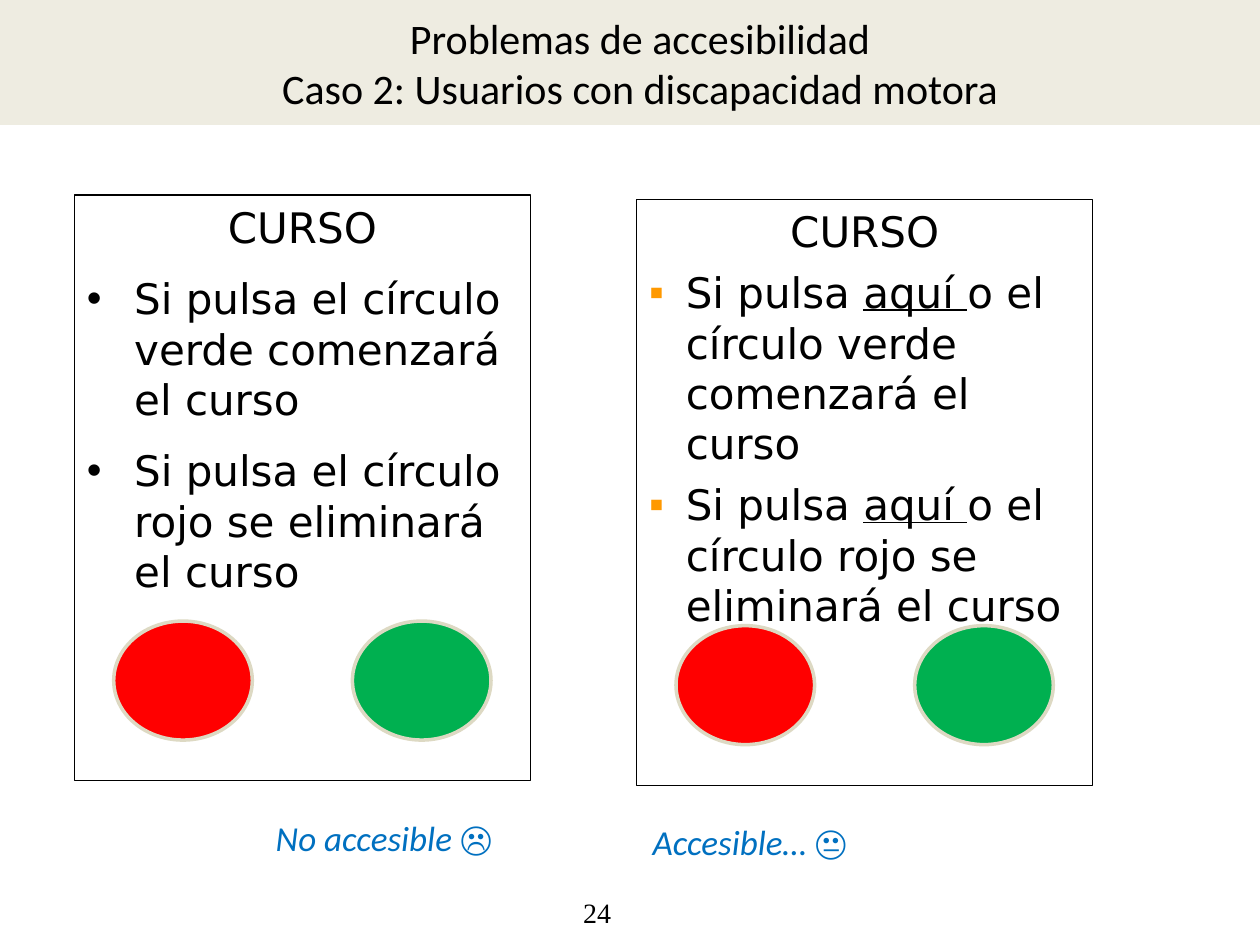
from lxml.etree import SubElement
from pptx import Presentation
from pptx.dml.color import RGBColor
from pptx.enum.shapes import MSO_SHAPE as Shape
from pptx.enum.text import MSO_ANCHOR as Anchor, MSO_AUTO_SIZE as AutoSize, PP_ALIGN as Align
from pptx.oxml.ns import qn
from pptx.util import Pt

COLORS = {
    "text": "000000", "banner": "EEECE1", "red": "FF0000", "green": "00B050",
    "ring": "DDD9C3", "caption": "0070C0", "orange": "FF9900",
}
BODY_FONT = "DejaVu Sans"
PANEL_SIZE = (260.6, 334.8)


def rgb(name):
    return RGBColor.from_string(COLORS[name])


def place(shape, left, top, width, height):
    shape.left, shape.top = Pt(left), Pt(top)
    shape.width, shape.height = Pt(width), Pt(height)


def add_span(para, text, size, font=BODY_FONT, color="text", italic=None, underline=None):
    span = para.add_run()
    span.text = text
    span.font.size, span.font.name = Pt(size), font
    span.font.color.rgb = rgb(color)
    span.font.italic, span.font.underline = italic, underline


def set_bullet(para, char=None, indent=0, color=None):
    props = para._p.get_or_add_pPr()
    props.set("marL", str(Pt(indent)))
    props.set("indent", str(-Pt(indent)))
    if not char:
        SubElement(props, qn("a:buNone"))
        return
    if color:
        SubElement(SubElement(props, qn("a:buClr")), qn("a:srgbClr"), val=COLORS[color])
    SubElement(props, qn("a:buFont"), typeface="Arial")
    SubElement(props, qn("a:buChar"), char=char)


def add_title(page, lines):
    box = page.shapes.title
    place(box, 0, 0, 720, 71.4)
    box.fill.solid()
    box.fill.fore_color.rgb = rgb("banner")
    frame = box.text_frame
    frame.auto_size, frame.vertical_anchor = AutoSize.NONE, Anchor.MIDDLE
    frame.margin_left, frame.margin_right = Pt(39.6), Pt(28)
    para = frame.paragraphs[0]
    para.alignment = Align.CENTER
    for index, line in enumerate(lines):
        if index:
            para.add_line_break()
        add_span(para, line, 24, "Calibri")


def fill_panel(box, left, top, items, gap, **bullet):
    """Outline a course panel and write its heading and bulleted items."""
    place(box, left, top, *PANEL_SIZE)
    box.line.color.rgb, box.line.width = rgb("text"), Pt(0.75)
    frame = box.text_frame
    frame.word_wrap, frame.auto_size = True, AutoSize.NONE
    frame.vertical_anchor = Anchor.TOP
    heading = frame.paragraphs[0]
    set_bullet(heading)
    heading.alignment, heading.space_before = Align.CENTER, Pt(0)
    add_span(heading, "CURSO", 24)
    for item in items:
        para = frame.add_paragraph()
        set_bullet(para, **bullet)
        para.alignment, para.space_before = Align.LEFT, Pt(gap)
        for text, underline in item:
            add_span(para, text, 24, underline=underline)


def add_circles(page, panel_left, panel_top):
    for index, color in enumerate(("red", "green")):
        circle = page.shapes.add_shape(
            Shape.OVAL, Pt(panel_left + 22.5 + index * 136.4), Pt(panel_top + 243.5),
            Pt(79.2), Pt(68))
        circle.shadow.inherit = False
        circle.fill.solid()
        circle.fill.fore_color.rgb = rgb(color)
        circle.line.color.rgb, circle.line.width = rgb("ring"), Pt(2)


def add_label(page, left, top, width, height, spans, **style):
    box = page.shapes.add_textbox(Pt(left), Pt(top), Pt(width), Pt(height))
    box.text_frame.word_wrap = False
    for text, italic in spans:
        add_span(box.text_frame.paragraphs[0], text, italic=italic, **style)


def main():
    deck = Presentation()
    deck.slide_width, deck.slide_height = Pt(720), Pt(540)
    page = deck.slides.add_slide(deck.slide_layouts[1])
    add_title(page, ["Problemas de accesibilidad",
                     "Caso 2: Usuarios con discapacidad motora"])

    # Left panel: circles only
    left, top = 42.5, 111.4
    fill_panel(page.placeholders[1], left, top,
               [[(f"Si pulsa el círculo {action} el curso", None)]
                for action in ("verde comenzará", "rojo se eliminará")],
               gap=12, char="•", indent=27)
    add_circles(page, left, top)

    # Right panel: circles and text links
    left, top = 363.8, 114
    panel = page.shapes.add_shape(Shape.RECTANGLE, 0, 0, 0, 0)
    panel.shadow.inherit = False
    panel.fill.background()
    fill_panel(panel, left, top,
               [[("Si pulsa ", None), ("aquí ", True), (f"o el círculo {action} el curso", None)]
                for action in ("verde comenzará", "rojo se eliminará")],
               gap=6, char="▪", indent=21, color="orange")
    add_circles(page, left, top)

    # Verdicts and page number
    verdict = {"size": 20, "font": "Calibri", "color": "caption"}
    add_label(page, 150.5, 463, 160.6, 31.5, [("No accesible ", True), ("☹", False)], **verdict)
    add_label(page, 365.8, 465.2, 152, 31.5, [("Accesible… ", True), ("😐", False)], **verdict)
    add_label(page, 326.2, 508.3, 48.2, 26.6, [("24", None)], size=16, font="Times New Roman")

    deck.save("out.pptx")


if __name__ == "__main__":
    main()
